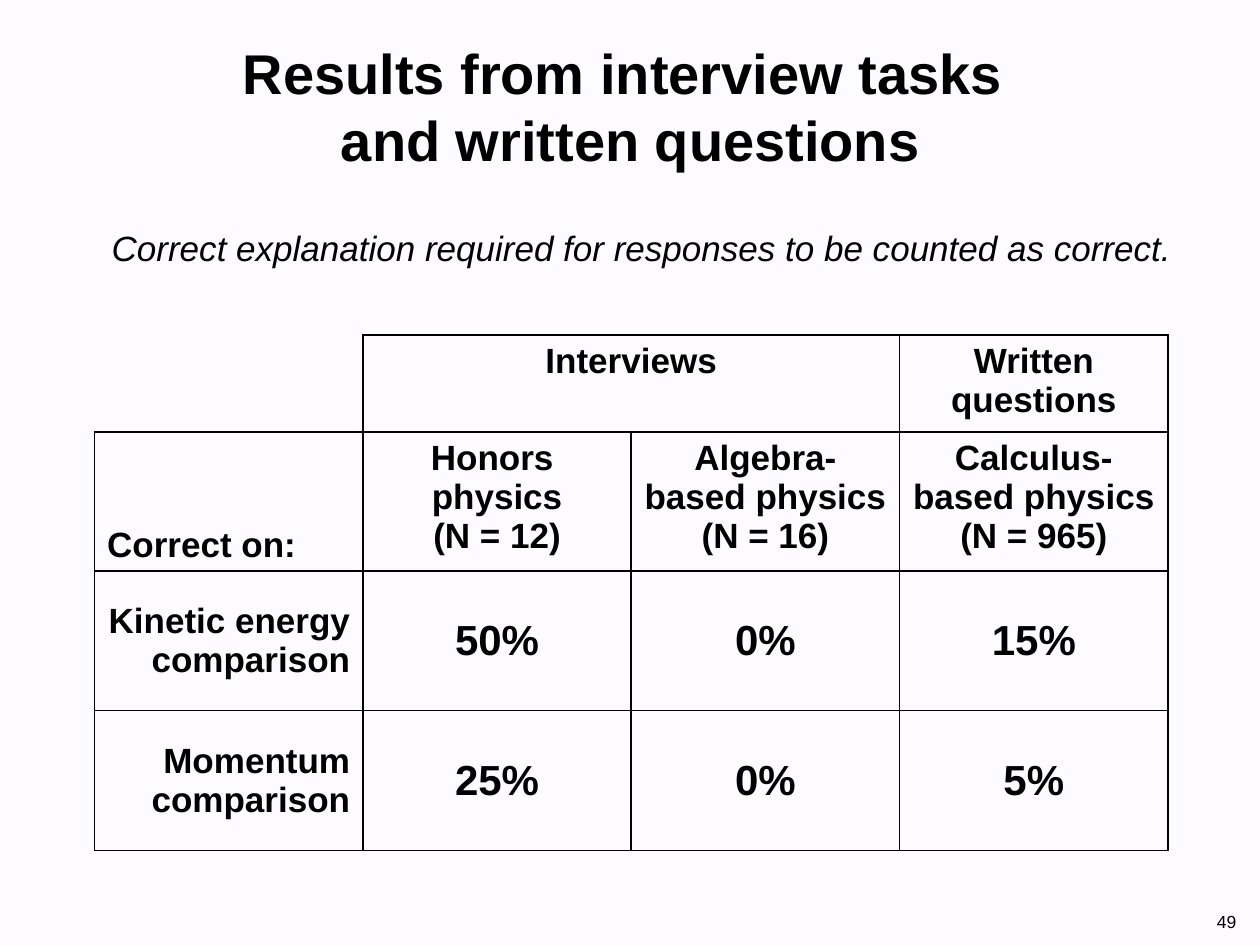
"""Build the slide comparing interview and written results."""
from lxml import etree
from pptx import Presentation
from pptx.dml.color import RGBColor
from pptx.enum.text import MSO_ANCHOR, PP_ALIGN
from pptx.oxml.ns import qn
from pptx.util import Inches, Pt

LEFT, CENTER, RIGHT = PP_ALIGN.LEFT, PP_ALIGN.CENTER, PP_ALIGN.RIGHT
TOP, MIDDLE, BOTTOM = MSO_ANCHOR.TOP, MSO_ANCHOR.MIDDLE, MSO_ANCHOR.BOTTOM
BLACK = RGBColor(0x00, 0x00, 0x00)
NUMBER = RGBColor(0x01, 0x00, 0x00)
PAPER = RGBColor(0xFD, 0xFB, 0xFF)
FONT = "Arial"
COL_WIDTH = 2.13
ROW_HEIGHTS = (0.77, 1.1, 1.11, 1.11)
TABLE_TOP = 2.66

HEAD = dict(align=CENTER, bold=True)
CORNER = dict(align=LEFT, anchor=BOTTOM, bold=True)
LABEL = dict(align=RIGHT, anchor=MIDDLE, bold=True)
VALUE = dict(align=CENTER, anchor=MIDDLE, bold=True, size=24)

INTERVIEWS = [
    [("", HEAD), ("Interviews", HEAD), ("", HEAD)],
    [("Correct on:", CORNER), ("Honors \vphysics\n(N = 12)", HEAD),
     ("Algebra-based physics\v(N = 16)", HEAD)],
    [("Kinetic energy comparison", LABEL), ("50%", VALUE), ("0%", VALUE)],
    [("Momentum comparison", LABEL), ("25%", VALUE), ("0%", VALUE)],
]
WRITTEN = [
    [("Written questions", HEAD)],
    [("Calculus-based physics\v(N = 965)", HEAD)],
    [("15%", VALUE)],
    [("5%", VALUE)],
]


def write(tf, text, size=20, align=CENTER, anchor=TOP, bold=False,
          italic=False, color=BLACK):
    tf.text = text
    tf.vertical_anchor = anchor
    for p in tf.paragraphs:
        p.alignment = align
        p.font.size = Pt(size)
        for r in p.runs:
            r.font.name = FONT
            r.font.size = Pt(size)
            r.font.bold = bold
            r.font.italic = italic
            r.font.color.rgb = color


class Deck:
    def __init__(self):
        self.prs = Presentation()
        self.prs.slide_width, self.prs.slide_height = Inches(10), Inches(7.5)
        self.s = self.prs.slides.add_slide(self.prs.slide_layouts[6])
        fill = self.s.background.fill
        fill.solid()
        fill.fore_color.rgb = PAPER

    def text(self, box, text, wrap=True, **fmt):
        sp = self.s.shapes.add_textbox(*map(Inches, box))
        sp.text_frame.word_wrap = wrap
        write(sp.text_frame, text, **fmt)

    def borders(self, cell, sides):
        tc_pr = cell._tc.get_or_add_tcPr()
        for i, side in enumerate("LRTB"):
            ln = etree.Element(qn(f"a:ln{side}"), w=str(Pt(1)))
            if side in sides:
                fill = etree.SubElement(ln, qn("a:solidFill"))
                etree.SubElement(fill, qn("a:srgbClr"), val=str(BLACK))
            else:
                etree.SubElement(ln, qn("a:noFill"))
            tc_pr.insert(i, ln)

    def table(self, left, rows, open_corner=False):
        cols = len(rows[0])
        frame = self.s.shapes.add_table(
            len(rows), cols, Inches(left), Inches(TABLE_TOP),
            Inches(COL_WIDTH * cols), Inches(sum(ROW_HEIGHTS)))
        table = frame.table
        table.first_row = table.horz_banding = False
        for col in table.columns:
            col.width = Inches(COL_WIDTH)
        for i, row in enumerate(rows):
            table.rows[i].height = Inches(ROW_HEIGHTS[i])
            for j, (text, fmt) in enumerate(row):
                cell = table.cell(i, j)
                write(cell.text_frame, text, **fmt)
                cell.vertical_anchor = fmt.get("anchor", TOP)
                cell.fill.background()
                corner = open_corner and i == j == 0
                self.borders(cell, "RB" if corner else "LRTB")
        return table


def main():
    deck = Deck()
    deck.text((1.02, 0.25, 7.97, 1.18),
              "Results from interview tasks \vand written questions",
              size=32, bold=True, anchor=MIDDLE)
    deck.text((0.58, 1.75, 9.03, 0.43),
              "Correct explanation required for responses to be counted as correct.",
              italic=True)
    table = deck.table(0.75, INTERVIEWS, open_corner=True)
    table.cell(0, 1).merge(table.cell(0, 2))
    deck.table(7.14, WRITTEN)
    deck.text((7.83, 7.2, 2.08, 0.25), "49", wrap=False, size=10,
              align=RIGHT, anchor=BOTTOM, color=NUMBER)
    deck.prs.save("out.pptx")


if __name__ == "__main__":
    main()
